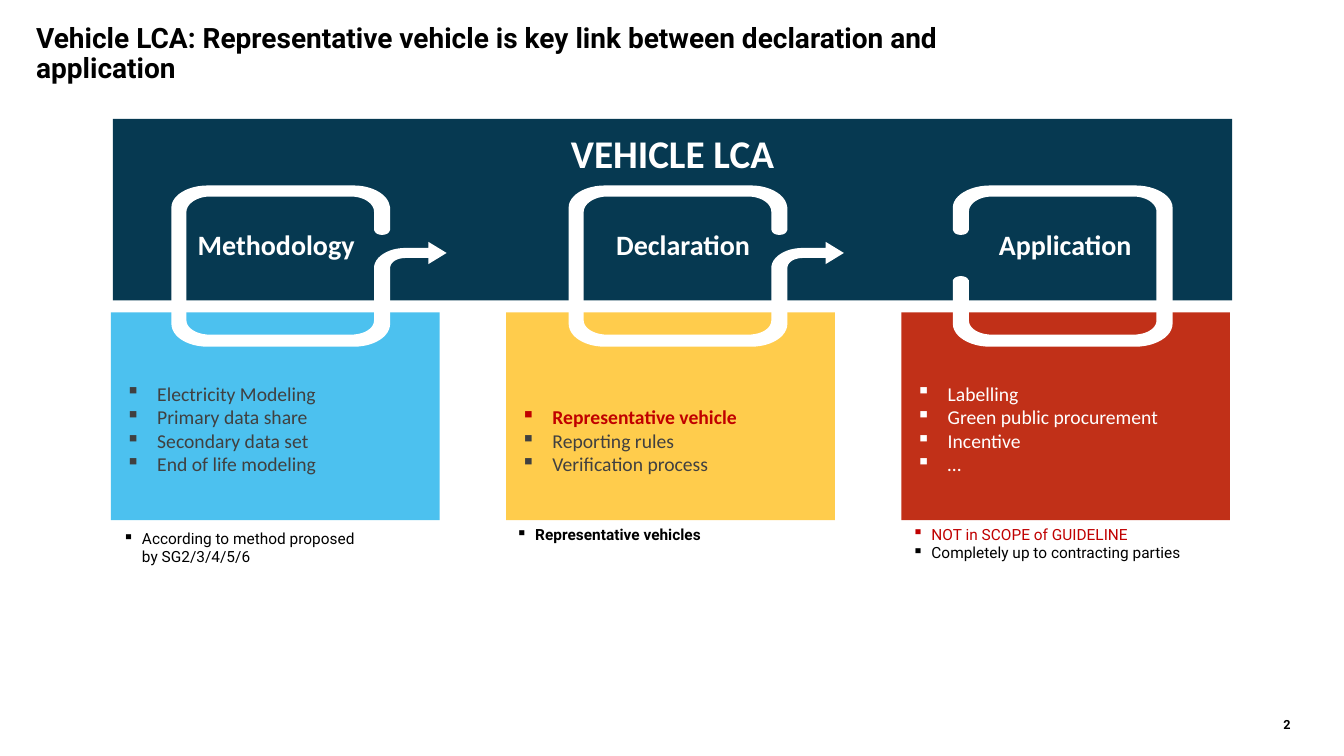
from dataclasses import dataclass

from lxml.etree import SubElement
from pptx import Presentation
from pptx.dml.color import RGBColor
from pptx.enum.shapes import MSO_SHAPE as Preset
from pptx.enum.text import MSO_ANCHOR as Anchor, PP_ALIGN as Align
from pptx.oxml.ns import qn
from pptx.util import Inches, Pt


@dataclass(frozen=True)
class Theme:
    heading_font: str = "Roboto"
    diagram_font: str = "Calibri"
    black: str = "000000"
    white: str = "FFFFFF"
    grey: str = "404040"
    accent: str = "C00000"
    navy: str = "063951"
    blue: str = "4CC1EF"
    yellow: str = "FFCC4C"
    red: str = "C13018"
    banner_size: int = 28
    title_size: int = 20
    list_size: int = 14
    note_size: int = 11
    number_size: int = 9


@dataclass(frozen=True)
class Line:
    text: str
    color: str
    bold: bool = False


THEME = Theme()

# Ring outlines in inches: two numbers are a line end, six a Bezier segment
ARROW_RING = [
    (0.36, 0), (1.81, 0), (1.98, 0, 2.13, 0.08, 2.16, 0.18), (2.17, 0.22),
    (2.17, 0.44), (2.16, 0.46), (2.15, 0.48, 2.12, 0.49, 2.09, 0.49),
    (2.06, 0.49, 2.03, 0.48, 2.02, 0.46), (2.01, 0.44), (2.01, 0.26),
    (2.01, 0.18, 1.91, 0.11, 1.78, 0.11), (0.38, 0.11),
    (0.26, 0.11, 0.15, 0.18, 0.15, 0.26), (0.15, 1.34),
    (0.15, 1.42, 0.26, 1.48, 0.38, 1.48), (1.78, 1.48),
    (1.91, 1.48, 2.01, 1.42, 2.01, 1.34), (2.01, 0.82),
    (2.01, 0.71, 2.15, 0.62, 2.32, 0.62), (2.55, 0.62), (2.55, 0.56),
    (2.73, 0.67), (2.55, 0.78), (2.55, 0.72), (2.32, 0.72),
    (2.24, 0.72, 2.17, 0.76, 2.17, 0.82), (2.17, 1.37),
    (2.17, 1.5, 2.01, 1.6, 1.81, 1.6), (0.36, 1.6),
    (0.16, 1.6, 0, 1.5, 0, 1.37), (0, 0.22), (0, 0.1, 0.16, 0, 0.36, 0),
]
OPEN_RING = [
    (0.37, 0), (1.81, 0), (2.01, 0, 2.18, 0.1, 2.18, 0.22), (2.18, 1.37),
    (2.18, 1.5, 2.01, 1.6, 1.81, 1.6), (0.37, 1.6),
    (0.17, 1.6, 0, 1.5, 0, 1.37), (0, 0.94), (0.01, 0.93),
    (0.02, 0.91, 0.05, 0.9, 0.08, 0.9), (0.11, 0.9, 0.14, 0.91, 0.15, 0.93),
    (0.16, 0.94), (0.16, 1.34), (0.16, 1.42, 0.26, 1.48, 0.39, 1.48),
    (1.79, 1.48), (1.92, 1.48, 2.02, 1.42, 2.02, 1.34), (2.02, 0.26),
    (2.02, 0.18, 1.92, 0.11, 1.79, 0.11), (0.39, 0.11),
    (0.26, 0.11, 0.16, 0.18, 0.16, 0.26), (0.16, 0.44), (0.15, 0.46),
    (0.14, 0.48, 0.11, 0.49, 0.08, 0.49), (0.05, 0.49, 0.02, 0.48, 0.01, 0.46),
    (0, 0.44), (0, 0.22), (0, 0.1, 0.17, 0, 0.37, 0),
]


def flatten(outline, steps=12):
    """Turn lines and Bezier segments into a list of points."""
    points = [outline[0]]
    for segment in outline[1:]:
        if len(segment) == 2:
            points.append(segment)
            continue
        start, first, second, end = points[-1], segment[:2], segment[2:4], segment[4:]
        for step in range(1, steps + 1):
            t = step / steps
            u = 1 - t
            points.append(tuple(
                u**3 * a + 3 * u * u * t * b + 3 * u * t * t * c + t**3 * d
                for a, b, c, d in zip(start, first, second, end)))
    return points


class SlideBuilder:
    def __init__(self, slide, theme):
        self.slide = slide
        self.theme = theme

    def paint(self, shape, color):
        shape.shadow.inherit = False
        shape.fill.solid()
        shape.fill.fore_color.rgb = RGBColor.from_string(color)
        shape.line.fill.background()

    def set_text(self, shape, lines, size, font, insets=(0.1, 0.05, 0.1, 0.05),
                 align=Align.LEFT, anchor=Anchor.TOP, indent=0, spacing=None, wrap=True):
        frame = shape.text_frame
        frame.word_wrap = wrap
        frame.vertical_anchor = anchor
        (frame.margin_left, frame.margin_top,
         frame.margin_right, frame.margin_bottom) = map(Inches, insets)
        for index, line in enumerate(lines):
            paragraph = frame.add_paragraph() if index else frame.paragraphs[0]
            paragraph.text = line.text
            paragraph.alignment = align
            if spacing:
                paragraph.line_spacing = spacing
            if indent:
                self.bullet(paragraph, indent)
            paragraph.font.name = font
            paragraph.font.size = Pt(size)
            paragraph.font.bold = line.bold
            paragraph.font.color.rgb = RGBColor.from_string(line.color)

    def bullet(self, paragraph, indent):
        properties = paragraph._p.get_or_add_pPr()
        properties.set("marL", str(Inches(indent)))
        properties.set("indent", str(-Inches(indent)))
        SubElement(properties, qn("a:buChar")).set("char", "▪")

    def text(self, box, lines, size, font, **options):
        shape = self.slide.shapes.add_textbox(*map(Inches, box))
        self.set_text(shape, lines, size, font, **options)

    def block(self, box, color, lines, size, **options):
        shape = self.slide.shapes.add_shape(Preset.RECTANGLE, *map(Inches, box))
        self.paint(shape, color)
        self.set_text(shape, lines, size, self.theme.diagram_font, **options)

    def ring(self, left, top, outline):
        points = [(Inches(left + x), Inches(top + y)) for x, y in flatten(outline)]
        builder = self.slide.shapes.build_freeform(*points[0])
        builder.add_line_segments(points[1:], close=True)
        self.paint(builder.convert_to_shape(), self.theme.white)


def main():
    presentation = Presentation()
    presentation.slide_width = Inches(13.33)
    presentation.slide_height = Inches(7.5)
    slide = presentation.slides.add_slide(presentation.slide_layouts[6])
    page = SlideBuilder(slide, THEME)

    # Slide number, title and banner
    page.text((12.53, 7.09, 0.27, 0.17), [Line("2", THEME.black, True)],
              THEME.number_size, THEME.heading_font, insets=(0, 0, 0, 0),
              align=Align.RIGHT, anchor=Anchor.BOTTOM)
    title = "Vehicle LCA: Representative vehicle is key link between declaration and application"
    page.text((0.26, 0.24, 10.2, 0.27), [Line(title, THEME.black, True)],
              THEME.title_size, THEME.heading_font, insets=(0.1, 0, 0.1, 0.05), spacing=0.9)
    page.block((1.12, 1.18, 11.1, 1.8), THEME.navy, [Line("VEHICLE LCA", THEME.white, True)],
               THEME.banner_size, insets=(0.1, 0.1, 0.1, 0.05), align=Align.CENTER)

    # Stages: color, items, label, label box, ring left, ring outline, note box, notes
    stages = [
        (THEME.blue,
         [Line(item, THEME.grey) for item in ("Electricity Modeling", "Primary data share",
                                              "Secondary data set", "End of life modeling")],
         "Methodology", (1.83, 1.82), 1.7, ARROW_RING, (1.12, 5.2, 2.66, 0.47),
         [Line("According to method proposed by SG2/3/4/5/6", THEME.black)]),
        (THEME.yellow,
         [Line("Representative vehicle", THEME.accent, True),
          Line("Reporting rules", THEME.grey), Line("Verification process", THEME.grey)],
         "Declaration", (6, 1.55), 5.64, ARROW_RING, (5.02, 5.16, 3.26, 0.29),
         [Line("Representative vehicles", THEME.black, True)]),
        (THEME.red,
         [Line(item, THEME.white) for item in ("Labelling", "Green public procurement",
                                               "Incentive", "…")],
         "Application", (9.8, 1.53), 9.45, OPEN_RING, (8.95, 5.16, 3.26, 0.47),
         [Line("NOT in SCOPE of GUIDELINE", THEME.accent),
          Line("Completely up to contracting parties", THEME.black)]),
    ]
    for index, stage in enumerate(stages):
        color, items, label, (label_left, label_width), ring_left, outline, note_box, notes = stage
        page.block((1.1 + 3.92 * index, 3.1, 3.26, 2.06), color, items, THEME.list_size,
                   insets=(0.15, 0.05, 0.15, 0.44), align=Align.JUSTIFY,
                   anchor=Anchor.BOTTOM, indent=0.31)
        page.text((label_left, 2.2, label_width, 0.44), [Line(label, THEME.white, True)],
                  THEME.title_size, THEME.diagram_font, align=Align.CENTER,
                  anchor=Anchor.MIDDLE, wrap=False)
        page.ring(ring_left, 1.84, outline)
        page.text(note_box, notes, THEME.note_size, THEME.heading_font, indent=0.19)

    presentation.save("out.pptx")


if __name__ == "__main__":
    main()
